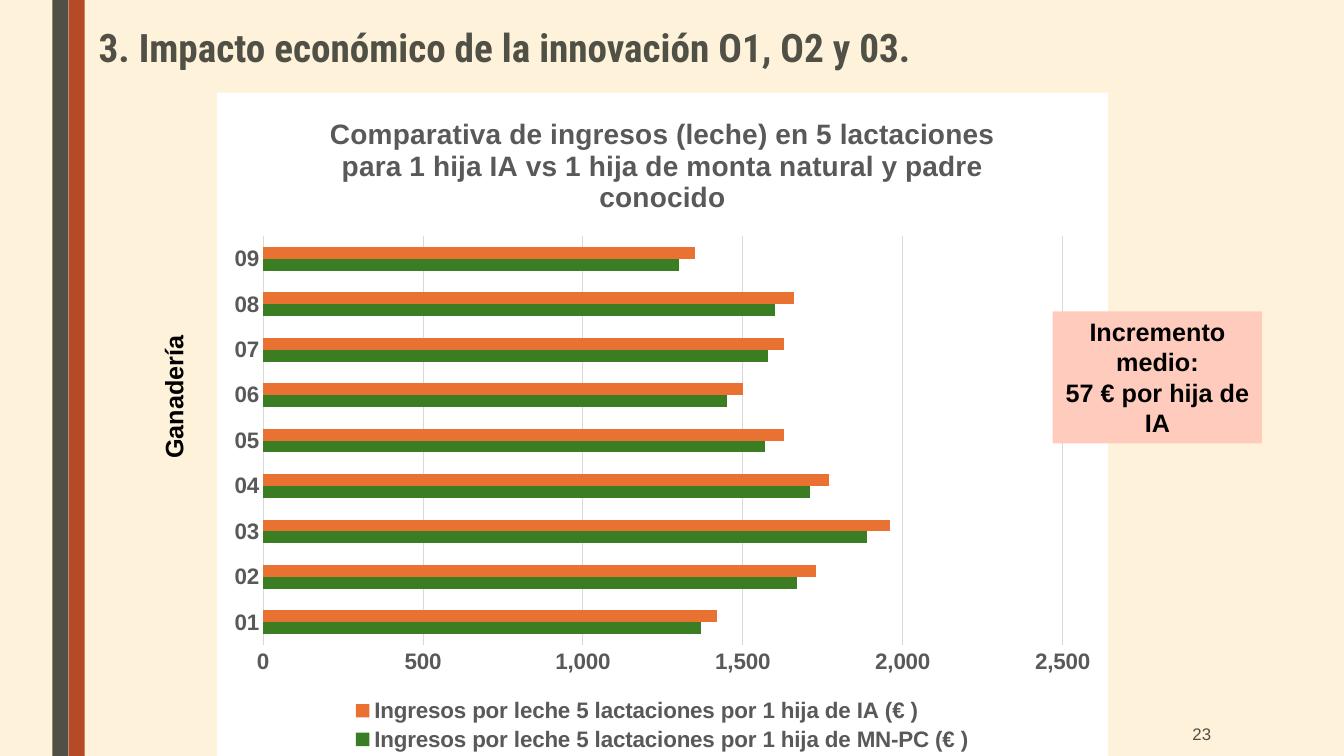
import pptx
import pptx.util
import pptx.dml.color
import pptx.chart.data
import pptx.enum.chart
import pptx.enum.shapes
import pptx.enum.text
import pptx.oxml
import pptx.oxml.ns

ALIGN = pptx.enum.text.PP_ALIGN
ANCHOR = pptx.enum.text.MSO_ANCHOR
CHART = pptx.enum.chart
RECT = pptx.enum.shapes.MSO_SHAPE.RECTANGLE
DARK, RUST, GRAY, PALE = "505046", "B64926", "595959", "D9D9D9"

deck = pptx.Presentation()
deck.slide_width = pptx.util.Inches(13.33)
deck.slide_height = pptx.util.Inches(7.5)
slide = deck.slides.add_slide(deck.slide_layouts[6])


def tint(part, hue):
    """Paint a fill or a font with a hex colour."""
    if hasattr(part, "solid"):
        part.solid()
        part = part.fore_color
    else:
        part = part.color
    part.rgb = pptx.dml.color.RGBColor.from_string(hue)


def write(text, cell, size=18, hue="000000", face="Arial", bold=True,
          align=ALIGN.LEFT, anchor=ANCHOR.TOP, space=None, fill=None, wrap=True):
    """Put text in a cell (left, top, width, height in % of the slide)."""
    place = [int(share * side / 100) for share, side in
             zip(cell, (deck.slide_width, deck.slide_height) * 2)]
    if fill:
        box = slide.shapes.add_shape(RECT, *place)
        box.shadow.inherit = False
        tint(box.fill, fill)
        box.line.fill.background()
    else:
        box = slide.shapes.add_textbox(*place)
    frame = box.text_frame
    frame.word_wrap = wrap
    frame.vertical_anchor = anchor
    frame.text = text
    for para in frame.paragraphs:
        para.alignment = align
        para.line_spacing = space
        font = para.font
        font.size, font.name, font.bold = pptx.util.Pt(size), face, bold
        tint(font, hue)
    return box


# Background and side bands
tint(slide.background.fill, "FFF2DA")
for step, hue in enumerate((DARK, RUST)):
    write("", (3.9 + 1.2 * step, 0, 1.2, 100), fill=hue)

# Heading
write("3. Impacto económico de la innovación O1, O2 y 03.", (6.6, 3.2, 86.87, 8),
      size=28, hue=DARK, face="Roboto Condensed", space=0.89)

# Chart data
data = pptx.chart.data.CategoryChartData(number_format="#,##0")
data.categories = [f"{n:02d}" for n in range(1, 10)]
rows = (
    ("MN-PC", "3B7D23", (1370, 1670, 1890, 1710, 1570, 1450, 1580, 1600, 1300)),
    ("IA", "E97132", (1420, 1730, 1960, 1770, 1630, 1500, 1630, 1660, 1350)),
)
for kind, hue, vals in rows:
    data.add_series(f"Ingresos por leche 5 lactaciones por 1 hija de {kind} (€ )", vals)

wide, high = deck.slide_width, deck.slide_height
chart = slide.shapes.add_chart(
    CHART.XL_CHART_TYPE.BAR_CLUSTERED, int(wide * 0.1613), int(high * 0.1227),
    int(wide * 0.6632), int(high * 0.8773), data).chart
chart.font.name = "Arial"
chart.font.size = pptx.util.Pt(10)

# Bars
plot = chart.plots[0]
plot.gap_width, plot.overlap, plot.vary_by_categories = 182, 0, False
for bar, row in zip(plot.series, rows):
    tint(bar.format.fill, row[1])

# Title, axes and legend
chart.has_title = True
title = chart.chart_title.text_frame
title.text = ("Comparativa de ingresos (leche) en 5 lactaciones para 1 hija IA "
              "vs 1 hija de monta natural y padre conocido")
chart.chart_title.include_in_layout = False
chart.has_legend = True
legend = chart.legend
legend.position = CHART.XL_LEGEND_POSITION.BOTTOM
legend.include_in_layout = False
cat, val = chart.category_axis, chart.value_axis
for font, size in ((title.paragraphs[0].runs[0].font, 20), (legend.font, 16),
                   (cat.tick_labels.font, 16), (val.tick_labels.font, 16)):
    font.size, font.name, font.bold = pptx.util.Pt(size), "Arial", True
    tint(font, GRAY)
for axis in (cat, val):
    axis.major_tick_mark = axis.minor_tick_mark = CHART.XL_TICK_MARK.NONE
val.minimum_scale, val.maximum_scale, val.major_unit = 0, 2500, 500
val.has_major_gridlines = True
val.tick_labels.number_format = "#,##0"
val.tick_labels.number_format_is_linked = False
val.format.line.fill.background()
for line in (cat.format.line, val.major_gridlines.format.line):
    line.width = pptx.util.Pt(0.75)
    tint(line.fill, PALE)

# Fixed plot area and white chart ground
names = pptx.oxml.ns.nsdecls("c", "a")
sides = "".join(f'<c:{key} val="{share}"/>' for key, share in
                (("x", 0.052), ("y", 0.216), ("w", 0.897), ("h", 0.617)))
area = chart._chartSpace.chart.plotArea
for old in area.findall(pptx.oxml.ns.qn("c:layout")):
    area.remove(old)
area.insert(0, pptx.oxml.parse_xml(
    f'<c:layout {names}><c:manualLayout><c:layoutTarget val="inner"/>'
    f'<c:xMode val="edge"/><c:yMode val="edge"/>{sides}</c:manualLayout></c:layout>'))
chart._chartSpace.chart.addnext(pptx.oxml.parse_xml(
    f'<c:spPr {names}><a:solidFill><a:srgbClr val="FFFFFF"/></a:solidFill>'
    '<a:ln><a:noFill/></a:ln></c:spPr>'))

# Callout, axis name and page number
write("Incremento medio:\n57 € por hija de IA", (78.32, 41.2, 15.6, 17.47),
      align=ALIGN.CENTER, fill="FFCBBD")
side = write("Ganadería", (11.4, 44.13, 3.75, 17.87), wrap=False)
side.text_frame._txBody.bodyPr.set("vert", "vert270")
write("23", (77.72, 94.13, 13.13, 5.87), size=12, hue=DARK, bold=False,
      align=ALIGN.RIGHT, anchor=ANCHOR.MIDDLE)

deck.save("out.pptx")
